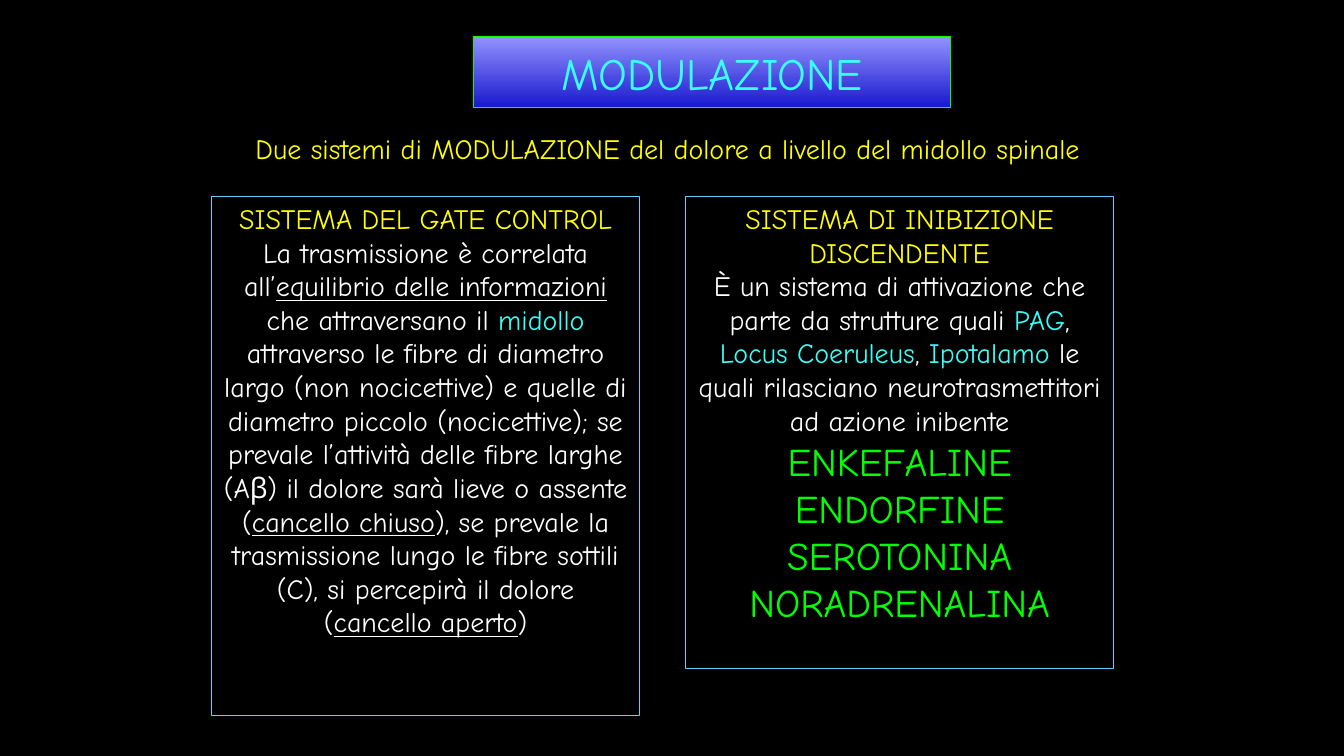
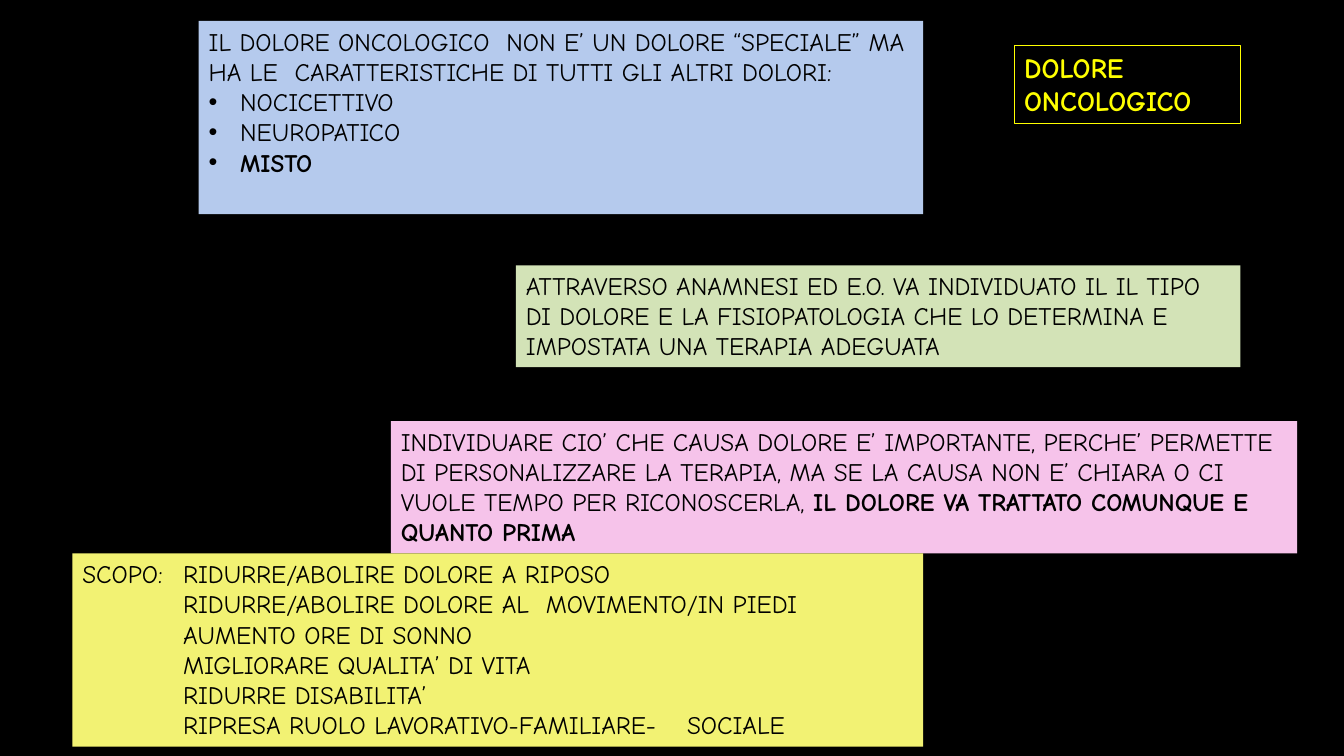
import pptx
import pptx.util
import pptx.dml.color
import pptx.enum.shapes
import pptx.enum.text
import lxml.etree

Pt = pptx.util.Pt
RGB = pptx.dml.color.RGBColor
ALIGN = pptx.enum.text.PP_ALIGN
ANCHOR = pptx.enum.text.MSO_ANCHOR

BLACK = RGB(0x00, 0x00, 0x00)
WHITE = RGB(0xFF, 0xFF, 0xFF)
YELLOW = RGB(0xFF, 0xFF, 0x00)
GREEN = RGB(0x00, 0xFF, 0x00)
CYAN = RGB(0x39, 0xFD, 0xF6)
SKY = RGB(0x66, 0xCC, 0xFF)
LILAC = RGB(0x93, 0x93, 0xFF)
NAVY = RGB(0x18, 0x18, 0xCE)
BLUE = RGB(0xB5, 0xCA, 0xED)
SAGE = RGB(0xD3, 0xE3, 0xB7)
PINK = RGB(0xF6, 0xC3, 0xEA)
LEMON = RGB(0xF2, 0xF2, 0x73)

FONT = "Comic Neue"
TITLE = {"size": Pt(32), "color": CYAN}
HEAD = {"size": Pt(20), "color": YELLOW}
BODY = {"size": Pt(20), "color": WHITE}
TERM = {**BODY, "color": CYAN}
LINK = {**BODY, "underline": True}
DRUG = {"size": Pt(28), "color": GREEN}
NOTE = {"size": Pt(18), "color": BLACK}
BOLD = {**NOTE, "bold": True}
LABEL = {**HEAD, "bold": True}

HANG = 22.5
TABS = (72, 432)


def new_slide(deck):
    slide = deck.slides.add_slide(deck.slide_layouts[6])
    slide.background.fill.solid()
    slide.background.fill.fore_color.rgb = BLACK
    return slide


def add_node(par, tag, **attrs):
    """Append a drawing element to the paragraph's properties."""
    props = par._p.get_or_add_pPr()
    node = lxml.etree.SubElement(props, pptx.oxml.ns.qn("a:" + tag))
    for key, value in attrs.items():
        node.set(key, str(value))
    return node


def set_bullet(par):
    props = par._p.get_or_add_pPr()
    props.set("marL", str(Pt(HANG)))
    props.set("indent", str(-Pt(HANG)))
    add_node(par, "buFont", typeface="Arial")
    add_node(par, "buChar", char="•")


def set_tabs(par):
    stops = add_node(par, "tabLst")
    for stop in TABS:
        tab = lxml.etree.SubElement(stops, pptx.oxml.ns.qn("a:tab"))
        tab.set("pos", str(Pt(stop)))
        tab.set("algn", "l")


def write(frame, pars, align, setup=None):
    """Fill a frame with paragraphs, each a list of (text, format) runs.

    setup(par) is called on every paragraph after the first, or on all
    of them when the text holds tabs.
    """
    frame.word_wrap = True
    for num, runs in enumerate(pars):
        par = frame.add_paragraph() if num else frame.paragraphs[0]
        par.alignment = align
        if setup and (num or setup is set_tabs):
            setup(par)
        for text, style in runs:
            run = par.add_run()
            run.text = text
            run.font.name = FONT
            for key, value in style.items():
                if key == "color":
                    run.font.color.rgb = value
                else:
                    setattr(run.font, key, value)


def add_box(slide, box, pars, fill=None, line=None, align=ALIGN.LEFT,
            setup=None):
    shape = slide.shapes.add_shape(
        pptx.enum.shapes.MSO_SHAPE.RECTANGLE, *map(Pt, box))
    shape.shadow.inherit = False
    if fill is None:
        shape.fill.background()
    else:
        shape.fill.solid()
        shape.fill.fore_color.rgb = fill
    if line is None:
        shape.line.fill.background()
    else:
        shape.line.color.rgb = line
        shape.line.width = Pt(0.75)
    shape.text_frame.vertical_anchor = ANCHOR.TOP
    write(shape.text_frame, pars, align, setup)
    return shape


def add_banner(slide, box, text):
    shape = add_box(slide, box, [[(text, TITLE)]], line=GREEN,
                    align=ALIGN.CENTER)
    shape.text_frame.vertical_anchor = ANCHOR.MIDDLE
    shape.fill.gradient()
    shape.fill.gradient_angle = 270
    for stop, color in zip(shape.fill.gradient_stops, (LILAC, NAVY)):
        stop.color.rgb = color


def add_intro(slide, box, text):
    frame = slide.shapes.add_textbox(*map(Pt, box)).text_frame
    write(frame, [[(text, HEAD)]], ALIGN.CENTER)


def modulation(deck):
    slide = new_slide(deck)
    add_intro(slide, (137.5, 90.7, 679, 31.7),
              "Due sistemi di MODULAZIONE del dolore a livello del "
              "midollo spinale")
    add_banner(slide, (338.4, 26, 340.5, 51), "MODULAZIONE")
    descent = [
        [("SISTEMA DI INIBIZIONE DISCENDENTE", HEAD)],
        [("È un sistema di attivazione che parte da strutture quali ", BODY),
         ("PAG", TERM), (", ", BODY), ("Locus Coeruleus", TERM),
         (", ", BODY), ("Ipotalamo", TERM),
         (" le quali rilasciano neurotrasmettitori ad azione inibente",
          BODY)],
        [("ENKEFALINE ENDORFINE SEROTONINA", DRUG)],
        [("NORADRENALINA", DRUG)],
    ]
    gate = [
        [("SISTEMA DEL GATE CONTROL", HEAD)],
        [("La trasmissione è correlata all’", BODY),
         ("equilibrio delle informazioni ", LINK),
         ("che attraversano il ", BODY), ("midollo", TERM),
         (" attraverso le fibre di diametro largo (non nocicettive) e "
          "quelle di diametro piccolo (nocicettive); se prevale l’attività "
          "delle fibre larghe (Aβ) il dolore sarà lieve o assente (", BODY),
         ("cancello chiuso", LINK),
         ("), se prevale la trasmissione lungo le fibre sottili (C), si "
          "percepirà il dolore (", BODY),
         ("cancello aperto", LINK), (")", BODY)],
    ]
    for left, height, pars in ((489.6, 337, descent), (151, 371, gate)):
        add_box(slide, (left, 140.4, 306, height), pars, line=SKY,
                align=ALIGN.CENTER)


def cancer_pain(deck):
    slide = new_slide(deck)
    kinds = [
        [("IL DOLORE ONCOLOGICO  NON E’ UN DOLORE “SPECIALE” MA HA LE  "
          "CARATTERISTICHE DI TUTTI GLI ALTRI DOLORI:", NOTE)],
        [("NOCICETTIVO", NOTE)],
        [("NEUROPATICO", NOTE)],
        [("MISTO", BOLD)],
    ]
    study = [[("ATTRAVERSO ANAMNESI ED E.O. VA INDIVIDUATO IL IL TIPO DI "
               "DOLORE E LA FISIOPATOLOGIA CHE LO DETERMINA E IMPOSTATA "
               "UNA TERAPIA ADEGUATA", NOTE)]]
    cause = [[("INDIVIDUARE CIO’ CHE CAUSA DOLORE E’ IMPORTANTE, PERCHE’ "
               "PERMETTE DI PERSONALIZZARE LA TERAPIA, MA SE LA CAUSA NON "
               "E’ CHIARA O CI VUOLE TEMPO PER RICONOSCERLA, ", NOTE),
              ("IL DOLORE VA TRATTATO COMUNQUE E QUANTO PRIMA", BOLD)]]
    goals = [[(text, NOTE)] for text in (
        "SCOPO:\tRIDURRE/ABOLIRE DOLORE A RIPOSO",
        "\tRIDURRE/ABOLIRE DOLORE AL  MOVIMENTO/IN PIEDI",
        "\tAUMENTO ORE DI SONNO",
        "\tMIGLIORARE QUALITA’ DI VITA",
        "\tRIDURRE DISABILITA’",
        "\tRIPRESA RUOLO LAVORATIVO-FAMILIARE-\tSOCIALE")]
    for box, pars, fill, setup in (
            ((142, 15, 517.5, 138), kinds, BLUE, set_bullet),
            ((368.6, 189.5, 517.5, 72.7), study, SAGE, None),
            ((279.2, 300.8, 647.3, 94.5), cause, PINK, None),
            ((51.7, 395.3, 607.8, 138), goals, LEMON, set_tabs)):
        add_box(slide, box, pars, fill=fill, setup=setup)
    add_box(slide, (724.4, 32.2, 162, 55.7),
            [[("DOLORE ONCOLOGICO", LABEL)]], line=YELLOW)


def main():
    deck = pptx.Presentation()
    deck.slide_width, deck.slide_height = Pt(960), Pt(540)
    modulation(deck)
    cancer_pain(deck)
    deck.save("out.pptx")


if __name__ == "__main__":
    main()
